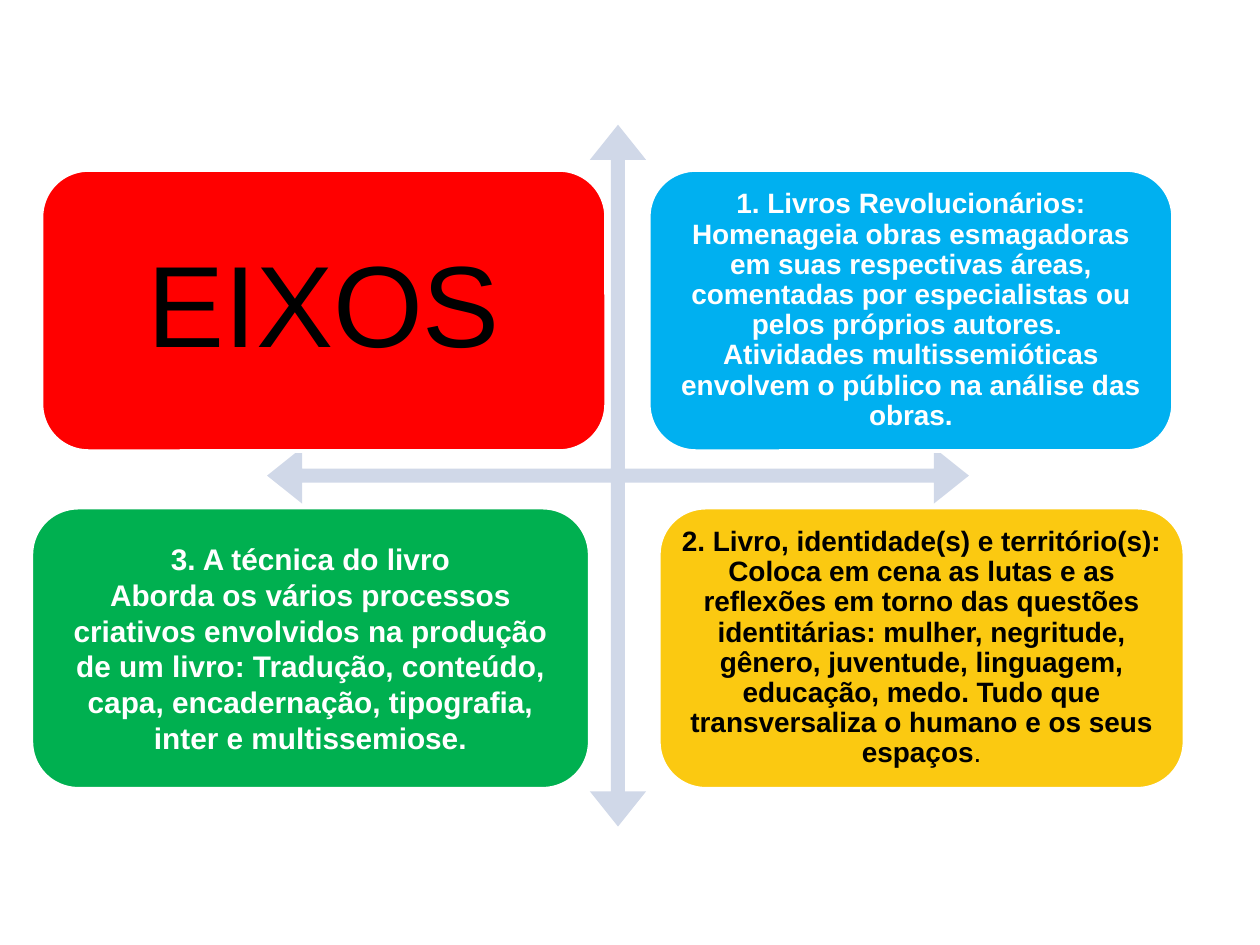
from pptx import Presentation
from pptx.dml.color import RGBColor
from pptx.enum.shapes import MSO_SHAPE as SHAPE
from pptx.enum.text import MSO_ANCHOR as ANCHOR, PP_ALIGN as ALIGN
from pptx.util import Inches, Pt

WHITE = RGBColor(0xFF, 0xFF, 0xFF)
BLACK = RGBColor(0x00, 0x00, 0x00)
RED = RGBColor(0xFF, 0x00, 0x00)
BLUE = RGBColor(0x00, 0xB0, 0xF0)
GREEN = RGBColor(0x00, 0xB0, 0x50)
YELLOW = RGBColor(0xFB, 0xC9, 0x11)
PALE = RGBColor(0xD0, 0xD8, 0xE8)

FONT = "Arial"
ROW_TOPS = (1.35, 4.03)
ROW_HEIGHT = 2.23
ARROW_SIZE = 5.57

REVOLUTIONARY = [
    [("1. Livros Revolucionários:", True)],
    [("Homenageia obras esmagadoras em suas respectivas áreas, comentadas "
      "por especialistas ou pelos próprios autores. ", True)],
    [("Atividades multissemióticas envolvem o público na análise das obras.", True)],
]
TECHNIQUE = [
    [("3. A técnica do livro", True)],
    [("Aborda os vários processos criativos envolvidos na produção de um livro: "
      "Tradução, conteúdo, capa, encadernação, tipografia, inter e multissemiose.", True)],
]
IDENTITY = [
    [("2. Livro, identidade(s) e território(s): Coloca em cena as lutas e as reflexões "
      "em torno das questões identitárias: mulher, negritude, gênero, juventude, "
      "linguagem, educação, medo. Tudo que transversaliza o humano e os seus espaços", True),
     (".", False)],
]


def add_filled(slide, kind, left, top, width, height, fill):
    sp = slide.shapes.add_shape(kind, *map(Inches, (left, top, width, height)))
    sp.shadow.inherit = False
    sp.fill.solid()
    sp.fill.fore_color.rgb = fill
    return sp


def add_axes(slide, left, top):
    sp = add_filled(slide, SHAPE.QUAD_ARROW, left, top, ARROW_SIZE, ARROW_SIZE, PALE)
    sp.line.fill.background()
    for i, share in enumerate((0.02, 0.04, 0.05)):
        sp.adjustments[i] = share


def write(sp, paragraphs, *, size, color, spacing=0.9, inset=0.07):
    tf = sp.text_frame
    tf.word_wrap = True
    tf.vertical_anchor = ANCHOR.MIDDLE
    tf.margin_left = tf.margin_right = Inches(inset)
    tf.margin_top = tf.margin_bottom = Inches(inset)
    for i, runs in enumerate(paragraphs):
        p = tf.paragraphs[0] if i == 0 else tf.add_paragraph()
        p.alignment = ALIGN.CENTER
        p.line_spacing = spacing
        for text, bold in runs:
            r = p.add_run()
            r.text = text
            r.font.name = FONT
            r.font.size = Pt(size)
            r.font.bold = bold
            r.font.color.rgb = color


def add_card(slide, row, left, width, fill, paragraphs, **text_format):
    sp = add_filled(slide, SHAPE.ROUNDED_RECTANGLE, left, ROW_TOPS[row],
                    width, ROW_HEIGHT, fill)
    sp.line.color.rgb = WHITE
    sp.line.width = Pt(2)
    write(sp, paragraphs, **text_format)


def main():
    prs = Presentation()
    prs.slide_width, prs.slide_height = Inches(10), Inches(7.5)
    slide = prs.slides.add_slide(prs.slide_layouts[6])
    add_axes(slide, 2.12, 0.99)
    add_card(slide, 0, 0.33, 4.48, RED, [[("EIXOS", False)]],
             size=66, color=BLACK, inset=0.28)
    add_card(slide, 0, 5.15, 4.16, BLUE, REVOLUTIONARY, size=16, color=WHITE)
    add_card(slide, 1, 0.25, 4.43, GREEN, TECHNIQUE, size=17, color=WHITE, spacing=1.0)
    add_card(slide, 1, 5.23, 4.17, YELLOW, IDENTITY, size=16, color=BLACK)
    prs.save("out.pptx")


if __name__ == "__main__":
    main()
